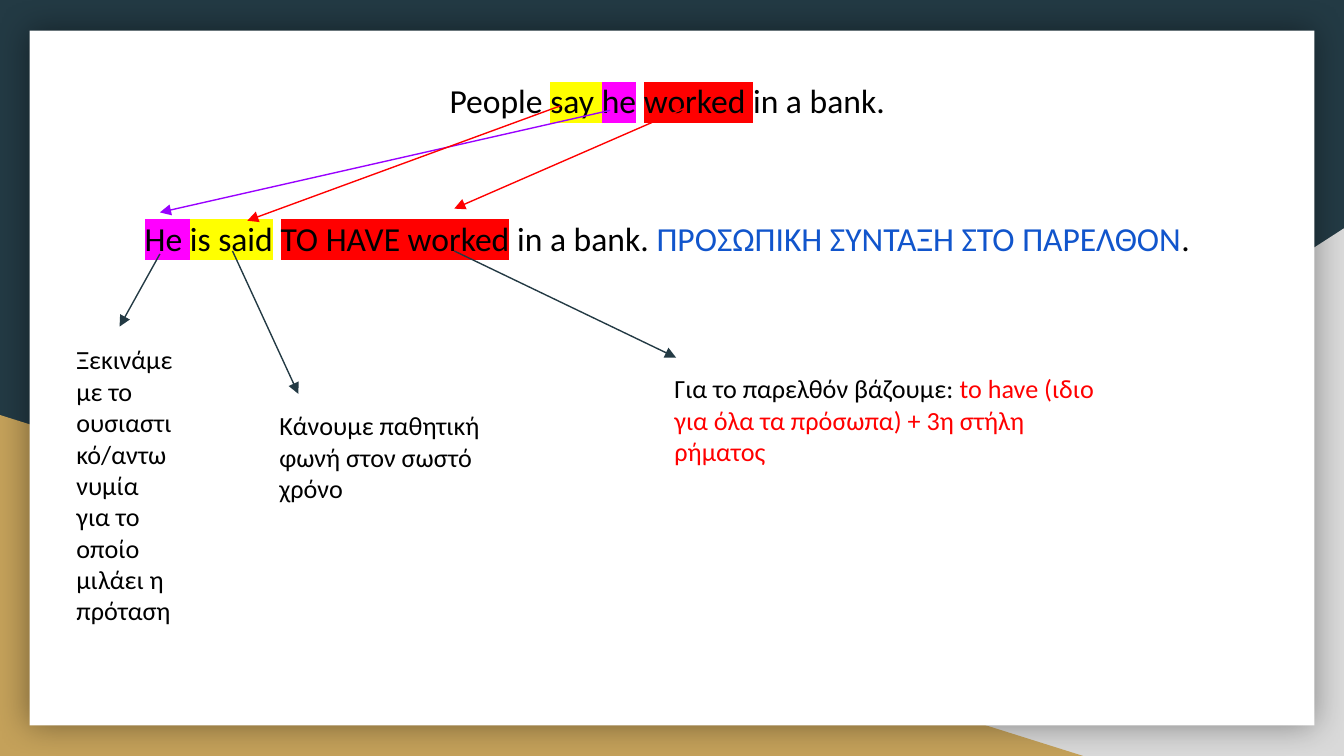
from lxml import etree
from pptx import Presentation
from pptx import util as u
from pptx.dml.color import RGBColor
from pptx.enum import shapes, text
from pptx.oxml import ns

WIDE, HIGH = 10, 5.625
HUES = {
    "navy": "233A44", "grey": "D9D9D9", "gold": "C4A15A", "white": "FFFFFF",
    "black": "000000", "yellow": "FFFF00", "pink": "FF00FF", "red": "FF0000",
    "blue": "1155CC", "violet": "9900FF",
}

KIND = shapes.MSO_SHAPE
PANELS = [
    (KIND.RIGHT_TRIANGLE, (39.2, 30.2, 60.8, 69.8), "grey", True),
    (KIND.RIGHT_TRIANGLE, (0, 54.9, 80.6, 45.1), "gold", False),
    (KIND.RECTANGLE, (2.2, 4.05, 95.6, 91.9), "white", False),
]

TITLE = {"size": u.Pt(18), "name": "Calibri"}
NOTE = {"size": u.Pt(14), "name": "Calibri"}
MID = {"alignment": text.PP_ALIGN.CENTER, "line_spacing": 1.15}
FRAME = {
    "word_wrap": True, "auto_size": text.MSO_AUTO_SIZE.SHAPE_TO_FIT_TEXT,
    "vertical_anchor": text.MSO_ANCHOR.TOP,
    "margin_left": u.Inches(0.1), "margin_right": u.Inches(0.1),
    "margin_top": u.Inches(0.1), "margin_bottom": u.Inches(0.1),
}

TEXTS = [
    ((4, 8, 91.3, 27.4), TITLE, [
        ({**MID, "space_before": u.Pt(12)}, [
            ("People ", "black", None), ("say ", "black", "yellow"),
            ("he", "black", "pink"), (" ", "black", None),
            ("worked ", "black", "red"), ("in a bank.", "black", None)]),
        ({**MID, "space_before": u.Pt(49), "space_after": u.Pt(12)}, [
            ("He ", "black", "pink"), ("is said", "black", "yellow"),
            (" ", "black", None), ("TO HAVE worked", "black", "red"),
            (" in a bank. ", "black", None),
            ("ΠΡΟΣΩΠΙΚΗ ΣΥΝΤΑΞΗ ΣΤΟ ΠΑΡΕΛΘΟΝ", "blue", None),
            (".", "black", None)]),
    ]),
    ((4.7, 43.7, 9.4, 41.2), NOTE, [({}, [
        ("Ξεκινάμε με το ουσιαστικό/αντωνυμία για το οποίο μιλάει η πρόταση",
         "black", None)])]),
    ((19.8, 52.4, 17.7, 16.2), NOTE, [({}, [
        ("Κάνουμε παθητική φωνή στον σωστό χρόνο", "black", None)])]),
    ((49.2, 47.5, 35, 16.2), NOTE, [({}, [
        ("Για το παρελθόν βάζουμε: ", "black", None),
        ("to have (ιδιο για όλα τα πρόσωπα) + 3η στήλη ρήματος",
         "red", None)])]),
]

ARROWS = [
    ((45.4, 14.6, 11.9, 28.1), "violet"),
    ((41.7, 14, 18.4, 29.2), "red"),
    ((51.1, 14.2, 33.8, 27.6), "red"),
    ((11.9, 33.6, 8.9, 43.2), "navy"),
    ((17.3, 33.2, 22.2, 52.1), "navy"),
    ((33.8, 33.2, 50.3, 47.3), "navy"),
]


def place(box):
    return [u.Inches(part * side / 100)
            for part, side in zip(box, (WIDE, HIGH) * 2)]


def hue(name):
    return RGBColor.from_string(HUES[name])


def apply(item, style):
    for key, value in style.items():
        setattr(item, key, value)


def node(top, tag, **attrs):
    return etree.SubElement(top, ns.qn(tag), attrs)


def add_panel(slide, kind, box, tint, flip):
    panel = slide.shapes.add_shape(kind, *place(box))
    panel.shadow.inherit = False
    panel.fill.solid()
    panel.fill.fore_color.rgb = hue(tint)
    panel.line.fill.background()
    if flip:
        panel.element.spPr.find(ns.qn("a:xfrm")).set("flipH", "1")
    return panel


def add_glow(panel):
    effect = panel.element.spPr.find(ns.qn("a:effectLst"))
    glow = node(effect, "a:outerShdw", blurRad=str(u.Pt(18)), dist="0",
                dir="0", algn="ctr", rotWithShape="0")
    tint = node(glow, "a:srgbClr", val=HUES["black"])
    node(tint, "a:alpha", val="40000")


def add_run(para, words, tint, mark, font):
    run = para.add_run()
    run.text = words
    apply(run.font, font)
    run.font.color.rgb = hue(tint)
    if mark:
        props = run.font._element
        light = etree.Element(ns.qn("a:highlight"))
        node(light, "a:srgbClr", val=HUES[mark])
        props.find(ns.qn("a:solidFill")).addnext(light)


def add_text(slide, box, font, paras):
    frame = slide.shapes.add_textbox(*place(box)).text_frame
    apply(frame, FRAME)
    for rank, (style, runs) in enumerate(paras):
        para = frame.add_paragraph() if rank else frame.paragraphs[0]
        apply(para, style)
        for run in runs:
            add_run(para, *run, font)


def add_arrow(slide, ends, tint):
    arrow = slide.shapes.add_connector(
        shapes.MSO_CONNECTOR.STRAIGHT, *place(ends))
    arrow.line.color.rgb = hue(tint)
    arrow.line.width = u.Pt(0.75)
    props = arrow.element.spPr
    node(props.find(ns.qn("a:ln")), "a:tailEnd", type="triangle")
    node(props, "a:effectLst")


def main():
    deck = Presentation()
    apply(deck, {"slide_width": u.Inches(WIDE),
                 "slide_height": u.Inches(HIGH)})
    slide = deck.slides.add_slide(deck.slide_layouts[6])
    slide.background.fill.solid()
    slide.background.fill.fore_color.rgb = hue("navy")
    panels = [add_panel(slide, *panel) for panel in PANELS]
    add_glow(panels[-1])
    title, *notes = TEXTS
    add_text(slide, *title)
    for arrow in ARROWS:
        add_arrow(slide, *arrow)
    for note in notes:
        add_text(slide, *note)
    deck.save("out.pptx")


if __name__ == "__main__":
    main()
